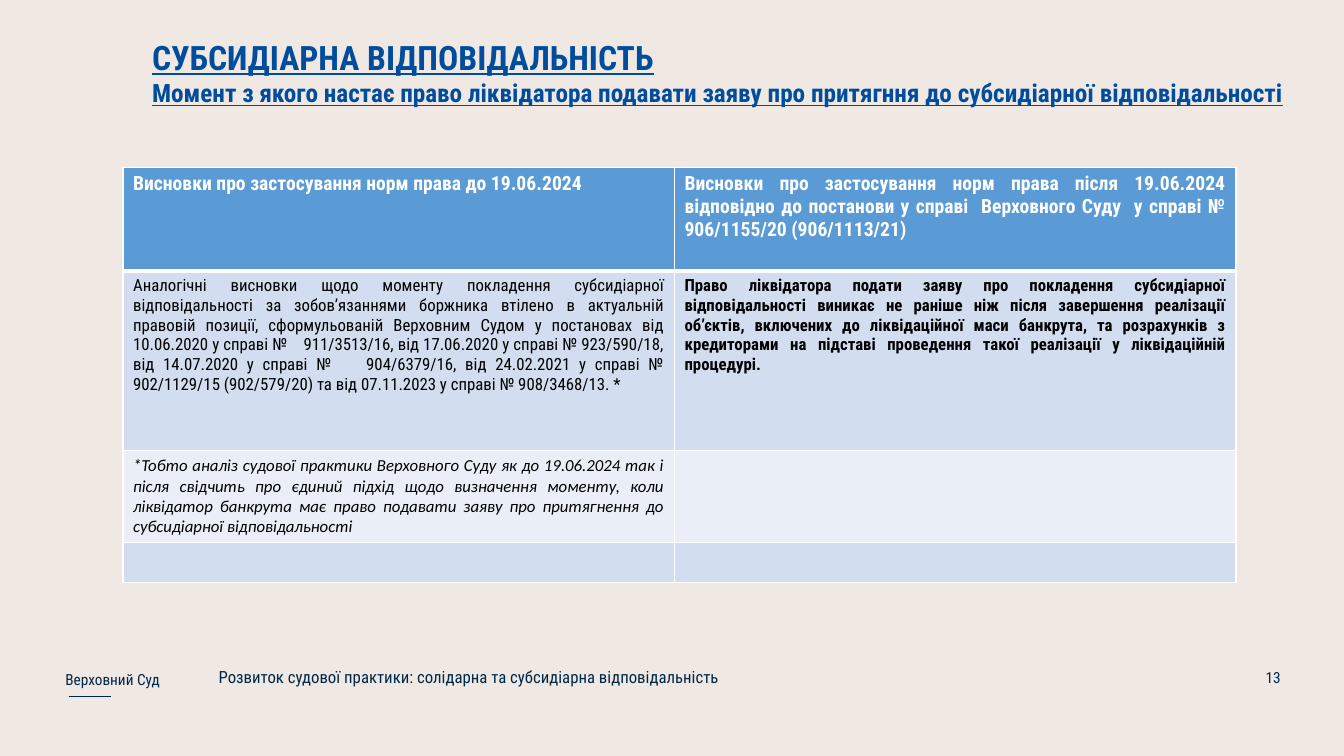
from dataclasses import dataclass

from lxml.etree import SubElement
from pptx import Presentation
from pptx.dml.color import RGBColor
from pptx.enum.shapes import MSO_CONNECTOR
from pptx.enum.text import MSO_ANCHOR, PP_ALIGN
from pptx.oxml.ns import qn
from pptx.util import Inches, Pt


@dataclass(frozen=True)
class Theme:
    background: str = "F0E8E3"
    title: str = "004D9D"
    footer: str = "00274E"
    topic: str = "002949"
    header: str = "5B9BD5"
    band_dark: str = "D2DEEF"
    band_light: str = "EAEFF7"
    white: str = "FFFFFF"
    black: str = "000000"
    font: str = "Roboto Condensed"
    note_font: str = "Calibri"
    title_size: float = 24
    subtitle_size: float = 18
    header_size: float = 14
    body_size: float = 12
    footer_size: float = 10.9


class SlideBuilder:
    """Holds the theme and the current slide and draws each kind of element."""

    def __init__(self, presentation, theme):
        self.theme = theme
        self.slide = presentation.slides.add_slide(presentation.slide_layouts[6])
        fill = self.slide.background.fill
        fill.solid()
        fill.fore_color.rgb = RGBColor.from_string(theme.background)

    def fill_paragraph(self, paragraph, text, size, color, layout=None, **font_format):
        for name, value in (layout or {}).items():
            setattr(paragraph, name, value)
        run = paragraph.add_run()
        run.text = text
        values = {"name": self.theme.font, "size": Pt(size), **font_format}
        for name, value in values.items():
            setattr(run.font, name, value)
        run.font.color.rgb = RGBColor.from_string(color)

    def text(self, box, lines, anchor=MSO_ANCHOR.TOP):
        shape = self.slide.shapes.add_textbox(*map(Inches, box))
        frame = shape.text_frame
        frame.word_wrap = True
        frame.vertical_anchor = anchor
        for index, line in enumerate(lines):
            paragraph = frame.add_paragraph() if index else frame.paragraphs[0]
            self.fill_paragraph(paragraph, **line)

    def line(self, start, end, color, width):
        connector = self.slide.shapes.add_connector(
            MSO_CONNECTOR.STRAIGHT, *map(Inches, start + end))
        connector.line.color.rgb = RGBColor.from_string(color)
        connector.line.width = Pt(width)
        SubElement(connector._element.spPr, qn("a:effectLst"))

    def border(self, cell, side, width):
        properties = cell._tc.get_or_add_tcPr()
        line = SubElement(properties, qn(f"a:ln{side}"), w=str(Pt(width)))
        fill = SubElement(line, qn("a:solidFill"))
        SubElement(fill, qn("a:srgbClr"), val=self.theme.white)

    def table(self, left, top, widths, heights, fills, contents):
        box = map(Inches, (left, top, sum(widths), sum(heights)))
        table = self.slide.shapes.add_table(len(heights), len(widths), *box).table
        for column, width in zip(table.columns, widths):
            column.width = Inches(width)
        for row_index, (row, height) in enumerate(zip(table.rows, heights)):
            row.height = Inches(height)
            for column_index, cell in enumerate(row.cells):
                thick = {0: "B", 1: "T"}.get(row_index)
                for side in "LRTB":
                    self.border(cell, side, 3 if side == thick else 1)
                cell.fill.solid()
                cell.fill.fore_color.rgb = RGBColor.from_string(fills[row_index])
                content = contents.get((row_index, column_index))
                if content:
                    self.fill_paragraph(cell.text_frame.paragraphs[0], **content)


def main():
    presentation = Presentation()
    presentation.slide_width = Inches(13.33)
    presentation.slide_height = Inches(7.5)
    theme = Theme()
    builder = SlideBuilder(presentation, theme)

    footer = {"size": theme.footer_size, "color": theme.footer}
    builder.line((0.68, 6.91), (1.1, 6.91), theme.footer, 1.12)
    builder.text((0.55, 6.53, 1.44, 0.4), [
        {"text": "Верховний Суд", "layout": {"line_spacing": 1.14}, **footer},
    ], MSO_ANCHOR.MIDDLE)

    heading = {"color": theme.title, "bold": True, "underline": True}
    builder.text((1.41, 0.32, 11.65, 0.81), [
        {"text": "СУБСИДІАРНА ВІДПОВІДАЛЬНІСТЬ", "size": theme.title_size, **heading},
        {"text": "Момент з якого настає право ліквідатора подавати заяву про "
                 "притягння до субсидіарної відповідальності",
         "size": theme.subtitle_size, **heading},
    ])

    builder.text((2.07, 6.59, 8.45, 0.36), [
        {"text": "Розвиток судової практики: солідарна та субсидіарна відповідальність",
         "size": theme.body_size, "color": theme.topic,
         "layout": {"alignment": PP_ALIGN.JUSTIFY, "line_spacing": 0.9,
                    "space_before": Pt(11)}},
    ])
    builder.text((9.8, 6.52, 3, 0.4), [
        {"text": "13", "layout": {"alignment": PP_ALIGN.RIGHT}, **footer},
    ], MSO_ANCHOR.MIDDLE)

    justified = {"alignment": PP_ALIGN.JUSTIFY}
    header = {"size": theme.header_size, "color": theme.white, "bold": True}
    body = {"size": theme.body_size, "color": theme.black}
    contents = {
        (0, 0): {"text": "Висновки про застосування норм права до 19.06.2024", **header},
        (0, 1): {
            "text": "Висновки про застосування норм права після 19.06.2024 відповідно "
                    "до постанови у справі  Верховного Суду  у справі № "
                    "906/1155/20 (906/1113/21)",
            "layout": justified, **header},
        (1, 0): {
            "text": "Аналогічні висновки щодо моменту покладення субсидіарної "
                    "відповідальності за зобов’язаннями боржника втілено в актуальній "
                    "правовій позиції, сформульованій Верховним Судом у постановах від "
                    "10.06.2020 у справі №    911/3513/16, від 17.06.2020 у справі "
                    "№ 923/590/18, від 14.07.2020 у справі №    904/6379/16, від "
                    "24.02.2021 у справі № 902/1129/15 (902/579/20) та від 07.11.2023 "
                    "у cправі № 908/3468/13. *",
            "layout": justified, "bold": False, **body},
        (1, 1): {
            "text": "Право ліквідатора подати заяву про покладення субсидіарної "
                    "відповідальності виникає не раніше ніж після завершення реалізації "
                    "об’єктів, включених до ліквідаційної маси банкрута, та розрахунків "
                    "з кредиторами на підставі проведення такої реалізації у "
                    "ліквідаційній процедурі.",
            "layout": {**justified, "space_after": Pt(10)}, "bold": True, **body},
        (2, 0): {
            "text": "*Тобто аналіз судової практики Верховного Суду як до 19.06.2024 "
                    "так і після свідчить про єдиний підхід щодо визначення моменту, "
                    "коли ліквідатор банкрута має право подавати заяву про притягнення "
                    "до субсидіарної відповідальності",
            "layout": justified, "name": theme.note_font, "bold": False,
            "italic": True, **body},
    }
    fills = [theme.header, theme.band_dark, theme.band_light, theme.band_dark]
    builder.table(1.22, 1.66, [5.47, 5.57], [1.03, 1.78, 0.91, 0.39], fills, contents)

    presentation.save("out.pptx")


if __name__ == "__main__":
    main()
